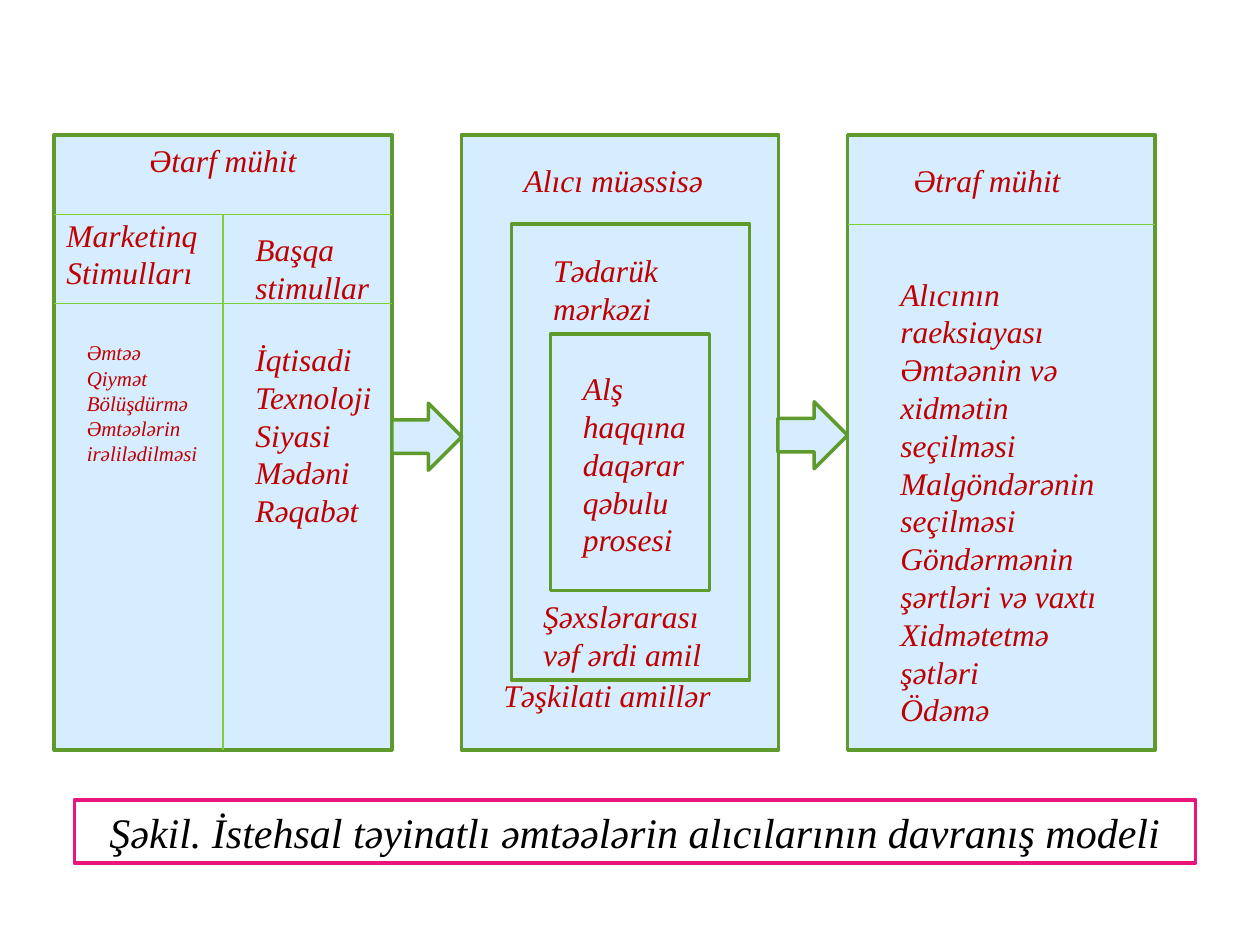
from pptx import Presentation
from pptx.dml.color import RGBColor
from pptx.enum.shapes import MSO_CONNECTOR, MSO_SHAPE
from pptx.enum.text import MSO_ANCHOR, MSO_AUTO_SIZE, PP_ALIGN
from pptx.oxml.ns import qn
from pptx.util import Cm, Pt


def color(code):
    return RGBColor.from_string(code)


class Board:
    """Holds the style and the current slide."""

    fill, edge, thin, ink = "D6ECFF", "5E9B2C", "7CD036", "C00000"
    font = {"name": "Times New Roman", "italic": True}

    def __init__(self, slide):
        self.slide = slide

    def label(self, shape, lines, size=18, ink=None, align=PP_ALIGN.LEFT):
        frame = shape.text_frame
        for i, line in enumerate(lines):
            para = frame.paragraphs[0] if i == 0 else frame.add_paragraph()
            para.alignment = align
            run = para.add_run()
            run.text = line
            for key, val in {**self.font, "size": Pt(size)}.items():
                setattr(run.font, key, val)
            run.font.color.rgb = color(ink or self.ink)
        return frame

    def box(self, x, y, w, h, kind=MSO_SHAPE.RECTANGLE, fill=None, edge=None):
        shape = self.slide.shapes.add_shape(kind, Cm(x), Cm(y), Cm(w), Cm(h))
        shape.shadow.inherit = False
        shape.fill.solid()
        shape.fill.fore_color.rgb = color(fill or self.fill)
        shape.line.color.rgb = color(edge or self.edge)
        shape.line.width = Pt(2)
        return shape

    def text(self, x, y, w, h, lines, wrap=True, **style):
        shape = self.slide.shapes.add_textbox(Cm(x), Cm(y), Cm(w), Cm(h))
        frame = self.label(shape, lines, **style)
        frame.word_wrap = wrap
        frame.auto_size = MSO_AUTO_SIZE.SHAPE_TO_FIT_TEXT

    def rule(self, x1, y1, x2, y2):
        line = self.slide.shapes.add_connector(
            MSO_CONNECTOR.STRAIGHT, Cm(x1), Cm(y1), Cm(x2), Cm(y2))
        line.line.color.rgb = color(self.thin)
        line.line.width = Pt(0.75)
        props = line._element.spPr
        props.append(props.makeelement(qn("a:effectLst"), {}))
        return line


def main():
    deck = Presentation()
    deck.slide_width, deck.slide_height = Cm(25.4), Cm(19.05)
    board = Board(deck.slides.add_slide(deck.slide_layouts[6]))

    # Three main columns
    top, tall = 2.72, 12.4
    cols = [(1.09, 6.81), (9.3, 6.4), (17.09, 6.2)]
    left, firm, right = [board.box(x, top, w, tall) for x, w in cols]

    # Left column: heading and rules
    frame = board.label(left, ["Ətarf mühit", "Marketinq", "Stimulları"])
    frame.vertical_anchor = MSO_ANCHOR.TOP
    frame.paragraphs[0].alignment = PP_ALIGN.CENTER
    frame.paragraphs[1].space_before = Pt(21)
    x, w = cols[0]
    for y in (4.32, 6.12):
        board.rule(x, y, x + w, y)
    mid = x + w / 2
    board.rule(mid, 4.32, mid, top + tall).end_connect(left, 2)

    # Left column: lists of stimuli
    board.text(4.9, 4.52, 3, 1.8, ["Başqa", "stimullar"])
    board.text(1.5, 6.73, 2.79, 2.82,
               ["Əmtəə", "Qiymət", "Bölüşdürmə", "Əmtəələrin",
                "irəlilədilməsi"], wrap=False, size=12)
    board.text(4.9, 6.73, 2.97, 4.11,
               ["İqtisadi", "Texnoloji", "Siyasi", "Mədəni", "Rəqabət"],
               wrap=False)

    # Middle column: nested boxes and their labels
    board.box(10.31, 4.52, 4.8, 9.19)
    board.box(11.1, 6.73, 3.2, 5.18)
    board.text(10.31, 3.12, 5.2, 1.02, ["Alıcı müəssisə"])
    board.text(10.9, 4.93, 3, 1.8, ["Tədarük mərkəzi"])
    board.text(11.5, 7.32, 2.8, 4.11, ["Alş haqqınadaqərar qəbulu prosesi"])
    board.text(10.7, 11.91, 4, 1.8, ["Şəxslərarası vəf ərdi amil"])
    board.text(9.9, 13.51, 5.2, 1.02, ["Təşkilati amillər"])

    # Right column
    x, w = cols[2]
    board.rule(x, 4.52, x + w, 4.52)
    board.text(17.5, 3.12, 4.8, 1.02, ["Ətraf mühit"], align=PP_ALIGN.CENTER)
    board.text(17.9, 5.41, 4.8, 9.5,
               ["Alıcının raeksiayası", "Əmtəənin və xidmətin seçilməsi",
                "Malgöndərənin seçilməsi", "Göndərmənin şərtləri və vaxtı",
                "Xidmətetmə şətləri", "Ödəmə"])

    # Arrows between the columns
    for x, y in ((7.9, 8.13), (15.68, 8.1)):
        board.box(x, y, 1.41, 1.35, MSO_SHAPE.RIGHT_ARROW)

    # Caption
    note = board.box(1.5, 16.13, 22.6, 1.27, fill="FFFFFF", edge="EA157A")
    board.label(
        note,
        ["Şəkil. İstehsal təyinatlı əmtəələrin alıcılarının davranış modeli"],
        size=24, ink="000000", align=PP_ALIGN.CENTER)

    deck.save("out.pptx")


if __name__ == "__main__":
    main()
